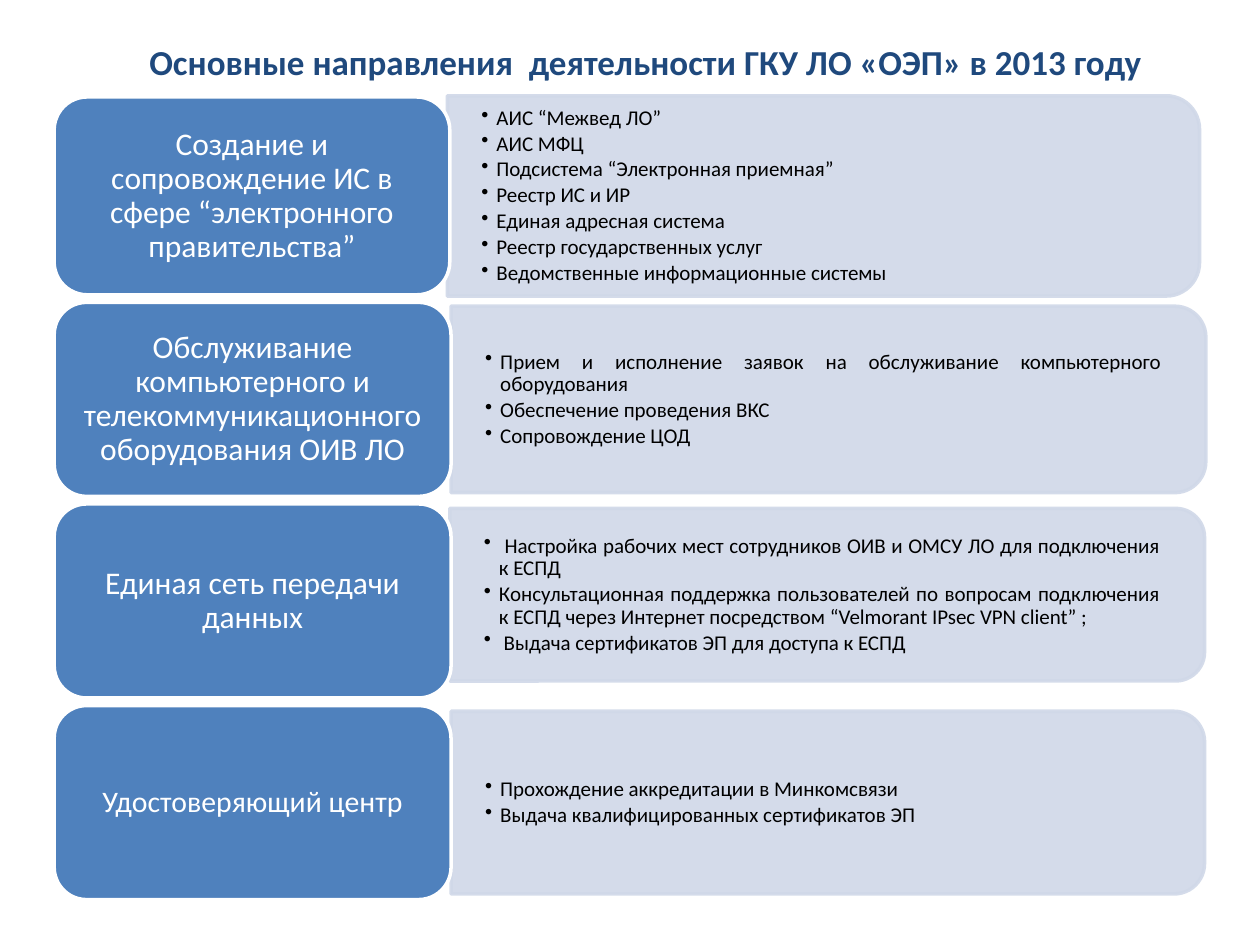
from dataclasses import dataclass

from lxml.etree import SubElement
from pptx import Presentation
from pptx.dml.color import RGBColor
from pptx.enum.shapes import MSO_SHAPE
from pptx.enum.text import MSO_ANCHOR, PP_ALIGN
from pptx.oxml.ns import qn
from pptx.util import Inches, Pt


@dataclass(frozen=True)
class Theme:
    font: str = "Calibri"
    title_color: str = "1F497D"
    label_fill: str = "4F81BD"
    panel_fill: str = "D0D8E8"
    white: str = "FFFFFF"
    black: str = "000000"
    title_size: float = 20
    label_size: float = 18
    small_label_size: float = 17
    item_size: float = 12
    line_width: float = 2
    panel_opacity: int = 90


THEME = Theme()

TITLE = "Основные направления  деятельности ГКУ ЛО «ОЭП» в 2013 году"

DIRECTIONS = [
    {
        "label": "Создание и сопровождение ИС в сфере “электронного правительства”",
        "items": [
            "АИС “Межвед ЛО”",
            "АИС МФЦ",
            "Подсистема “Электронная приемная”",
            "Реестр ИС и ИР",
            "Единая адресная система",
            "Реестр государственных услуг",
            "Ведомственные информационные системы",
        ],
        "label_box": (3.14, 1.57),
        "panel_box": (3.55, 5.97, 1.59),
    },
    {
        "label": "Обслуживание компьютерного и телекоммуникационного оборудования ОИВ ЛО",
        "items": [
            "Прием и исполнение заявок на обслуживание компьютерного оборудования",
            "Обеспечение проведения ВКС",
            "Сопровождение ЦОД",
        ],
        "panel_box": (3.58, 5.99, 1.48),
    },
    {
        "label": "Единая сеть передачи данных",
        "items": [
            " Настройка рабочих мест сотрудников ОИВ и ОМСУ ЛО для подключения к ЕСПД",
            "Консультационная поддержка пользователей по вопросам подключения к ЕСПД "
            "через Интернет посредством “Velmorant IPsec VPN client” ;",
            " Выдача сертификатов ЭП для доступа к ЕСПД",
        ],
        "panel_box": (3.57, 5.99, 1.37),
        "panel_shift": -0.05,
    },
    {
        "label": "Удостоверяющий центр",
        "items": [
            "Прохождение аккредитации в Минкомсвязи",
            "Выдача квалифицированных сертификатов ЭП",
        ],
        "panel_box": (3.58, 5.98, 1.45),
        "label_size": THEME.small_label_size,
    },
]

LABEL_LEFT, FIRST_TOP, ROW_GAP = 0.43, 0.77, 0.06
LABEL_BOX = (3.15, 1.54)
PANEL_INSET_X, PANEL_INSET_Y = 0.04, 0.07
BULLET_INDENT = 0.12


def add_bullet(paragraph):
    paragraph.level = 1
    properties = paragraph._p.get_or_add_pPr()
    properties.set("marL", str(Inches(BULLET_INDENT)))
    properties.set("indent", str(-Inches(BULLET_INDENT)))
    SubElement(properties, qn("a:buChar"), char="•")


def write_text(shape, lines, *, size, color, align=PP_ALIGN.CENTER, bold=False,
               margins=(0.07, 0.04), line_spacing=0.9, space_after=0, bullets=False):
    frame = shape.text_frame
    frame.word_wrap = True
    frame.vertical_anchor = MSO_ANCHOR.MIDDLE
    frame.margin_left = frame.margin_right = Inches(margins[0])
    frame.margin_top = frame.margin_bottom = Inches(margins[1])
    for index, line in enumerate(lines):
        paragraph = frame.add_paragraph() if index else frame.paragraphs[0]
        paragraph.alignment = align
        paragraph.line_spacing = line_spacing
        paragraph.space_after = Pt(space_after)
        if bullets:
            add_bullet(paragraph)
        run = paragraph.add_run()
        run.text = line
        run.font.name = THEME.font
        run.font.size = Pt(size)
        run.font.bold = bold
        run.font.color.rgb = RGBColor.from_string(color)


def add_block(slide, preset, left, top, width, height, *, fill, line, opacity=100):
    shape = slide.shapes.add_shape(
        preset, Inches(left), Inches(top), Inches(width), Inches(height))
    shape.shadow.inherit = False
    shape.fill.solid()
    shape.fill.fore_color.rgb = RGBColor.from_string(fill)
    shape.line.color.rgb = RGBColor.from_string(line)
    shape.line.width = Pt(THEME.line_width)
    if opacity < 100:
        for color in shape._element.spPr.iter(qn("a:srgbClr")):
            SubElement(color, qn("a:alpha"), val=str(opacity * 1000))
    return shape


def add_panel(slide, items, left, middle, width, height):
    panel = add_block(
        slide, MSO_SHAPE.ROUND_2_SAME_RECTANGLE,
        left + (width - height) / 2, middle - width / 2, height, width,
        fill=THEME.panel_fill, line=THEME.panel_fill, opacity=THEME.panel_opacity)
    panel.rotation = 90
    text_box = slide.shapes.add_textbox(
        Inches(left), Inches(middle - height / 2 + PANEL_INSET_Y),
        Inches(width - 2 * PANEL_INSET_X), Inches(height - 2 * PANEL_INSET_Y))
    write_text(text_box, items, size=THEME.item_size, color=THEME.black,
               align=PP_ALIGN.JUSTIFY, margins=(0.27, 0.14), space_after=1.8,
               bullets=True)


def add_title(slide):
    title = slide.shapes.title
    title.left, title.top = Inches(0.75), Inches(0.21)
    title.width, title.height = Inches(8.75), Inches(0.55)
    write_text(title, [TITLE], size=THEME.title_size, color=THEME.title_color,
               bold=True, margins=(0.1, 0.05), line_spacing=1.0)


def main():
    presentation = Presentation()
    presentation.slide_width, presentation.slide_height = Inches(10), Inches(7.5)
    slide = presentation.slides.add_slide(presentation.slide_layouts[5])
    add_title(slide)

    top = FIRST_TOP
    for direction in DIRECTIONS:
        label_width, label_height = direction.get("label_box", LABEL_BOX)
        panel_left, panel_width, panel_height = direction["panel_box"]
        middle = top + label_height / 2 + direction.get("panel_shift", 0)
        add_panel(slide, direction["items"], panel_left, middle, panel_width, panel_height)
        label = add_block(slide, MSO_SHAPE.ROUNDED_RECTANGLE, LABEL_LEFT, top,
                          label_width, label_height,
                          fill=THEME.label_fill, line=THEME.white)
        write_text(label, [direction["label"]], color=THEME.white,
                   size=direction.get("label_size", THEME.label_size))
        top += label_height + ROW_GAP

    presentation.save("out.pptx")


if __name__ == "__main__":
    main()
